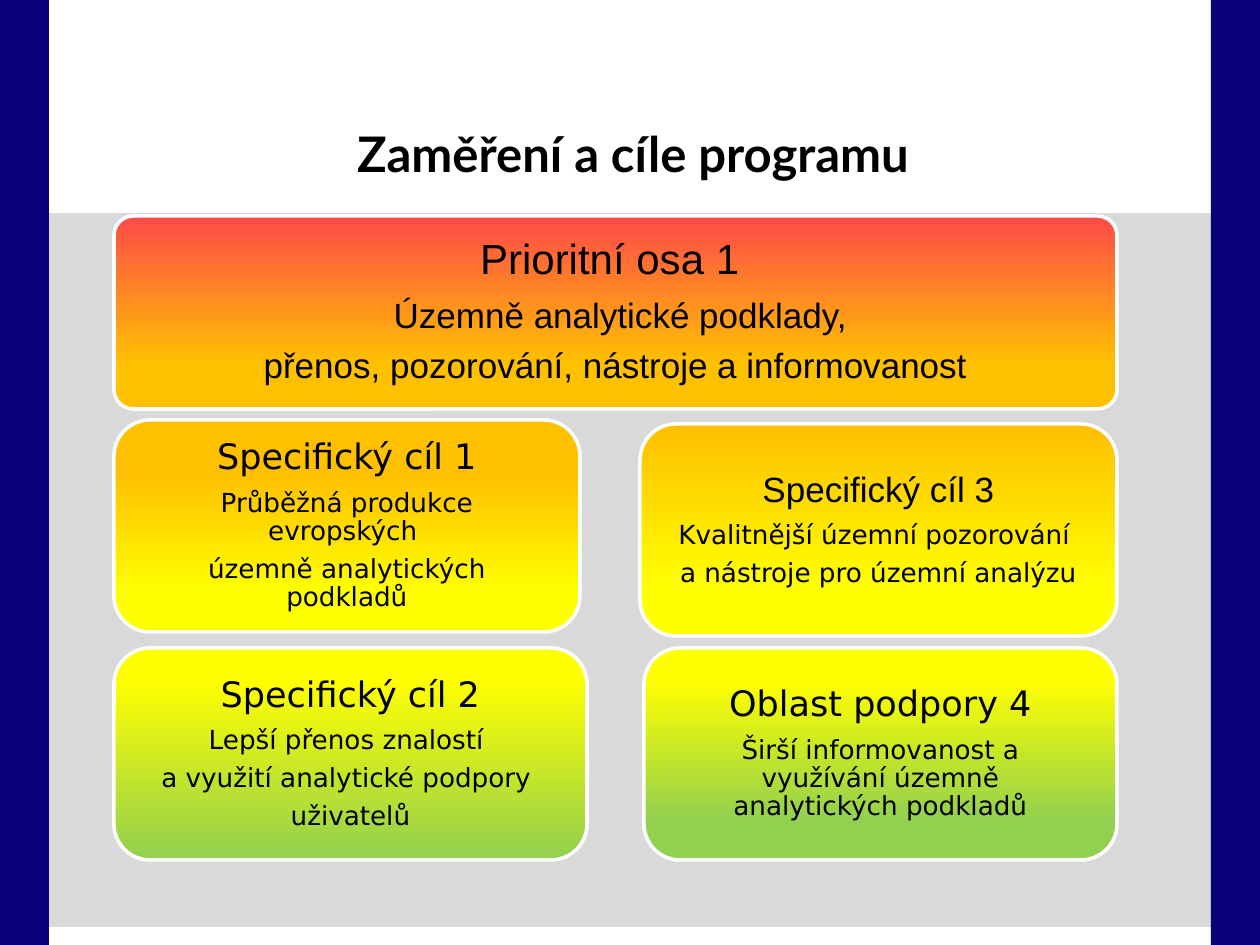
from dataclasses import dataclass
from lxml.etree import SubElement as Sub
from pptx import Presentation as Deck
from pptx.dml.color import RGBColor as RGB
from pptx.enum.shapes import MSO_SHAPE as Kind
from pptx.enum.text import MSO_ANCHOR as Anchor, PP_ALIGN as Align
from pptx.oxml.ns import qn
from pptx.util import Emu, Pt


@dataclass(frozen=True)
class Theme:
    navy: str = "08007D"
    grey: str = "D9D9D9"
    white: str = "FFFFFF"
    black: str = "000000"
    red: str = "FF4A4A"
    gold: str = "FFC000"
    sun: str = "FFFF00"
    green: str = "92D050"
    sans: str = "Arial"
    wide: str = "DejaVu Sans"
    bold: str = "Lato"
    title: float = 28
    axis: float = 24
    goal: float = 20
    note: float = 15
    edge: float = 2
    gap: int = 35000


T = Theme()
SCALE = 914400 / 126

PANELS = [
    ((114, 216, 1003, 193), 0.1, 19, [(0, T.red), (77, T.gold)], [
        ("Prioritní osa 1 ", T.axis, T.sans),
        (" Územně analytické podklady,", T.goal, T.sans),
        ("přenos, pozorování, nástroje a informovanost", T.goal, T.sans)]),
    ((114, 420, 466, 212), 0.17, 21, [(25, T.gold), (82, T.sun)], [
        ("Specifický cíl 1", T.goal, T.wide),
        ("Průběžná produkce evropských ", T.note, T.wide),
        ("územně analytických podkladů", T.note, T.wide)]),
    ((114, 648, 473, 212), 0.17, 21, [(15, T.sun), (100, T.green)], [
        ("Specifický cíl 2", T.goal, T.wide),
        ("Lepší přenos znalostí ", T.note, T.wide),
        ("a využití analytické podpory ", T.note, T.wide),
        ("uživatelů", T.note, T.wide)]),
    ((640, 424, 477, 212), 0.17, 21, [(2, T.gold), (78, T.sun)], [
        ("Specifický cíl 3", T.goal, T.sans),
        ("Kvalitnější územní pozorování ", T.note, T.wide),
        ("a nástroje pro územní analýzu", T.note, T.wide)]),
    ((644, 648, 473, 212), 0.17, 21, [(15, T.sun), (82, T.green)], [
        ("Oblast podpory 4", T.goal, T.wide),
        ("Širší informovanost a využívání územně analytických podkladů",
         T.note, T.wide)]),
]


def px(num):
    return Emu(round(num * SCALE))


def tint(hue):
    return RGB.from_string(hue)


def style(item, form):
    for key, val in form.items():
        setattr(item, key, val)


def frame(shape, pad, anchor):
    text = shape.text_frame
    sides = ("left", "top", "right", "bottom")
    style(text, {f"margin_{side}": px(pad) for side in sides})
    style(text, {"word_wrap": True, "vertical_anchor": anchor})
    return text


def write(para, words, size, face, bold=False):
    para.alignment = Align.CENTER
    run = para.add_run()
    run.text = words
    style(run.font, {"size": Pt(size), "name": face, "bold": bold})
    run.font.color.rgb = tint(T.black)


def space(para):
    para.line_spacing = 0.9
    after = Sub(para._p.get_or_add_pPr(), qn("a:spcAft"))
    Sub(after, qn("a:spcPct"), val=str(T.gap))


def band(slide, box, hue):
    shape = slide.shapes.add_shape(Kind.RECTANGLE, *map(px, box))
    shape.shadow.inherit = False
    shape.fill.solid()
    shape.fill.fore_color.rgb = tint(hue)
    shape.line.fill.background()


def title(slide, box, words):
    shape = slide.shapes.add_textbox(*map(px, box))
    text = frame(shape, 0, Anchor.TOP)
    write(text.paragraphs[0], words, T.title, T.bold, True)


def shade(fill, stops):
    fill.gradient()
    fill.gradient_angle = 270
    for stop, (place, hue) in zip(fill.gradient_stops, stops):
        stop.color.rgb = tint(hue)
        stop.position = place / 100


def panel(slide, box, bend, pad, stops, lines):
    shape = slide.shapes.add_shape(Kind.ROUNDED_RECTANGLE, *map(px, box))
    shape.shadow.inherit = False
    shape.adjustments[0] = bend
    shade(shape.fill, stops)
    shape.line.color.rgb = tint(T.white)
    shape.line.width = Pt(T.edge)
    text = frame(shape, pad, Anchor.MIDDLE)
    for i, line in enumerate(lines):
        para = text.add_paragraph() if i else text.paragraphs[0]
        space(para)
        write(para, *line)


def main():
    deck = Deck()
    style(deck, {"slide_width": px(1260), "slide_height": px(945)})
    slide = deck.slides.add_slide(deck.slide_layouts[6])
    band(slide, (0, 213, 1260, 714), T.grey)
    for left in (1211, 0):
        band(slide, (left, 0, 49, 945), T.navy)
    title(slide, (100, 123, 1066, 81), "Zaměření a cíle programu")
    for item in PANELS:
        panel(slide, *item)
    deck.save("out.pptx")


if __name__ == "__main__":
    main()
